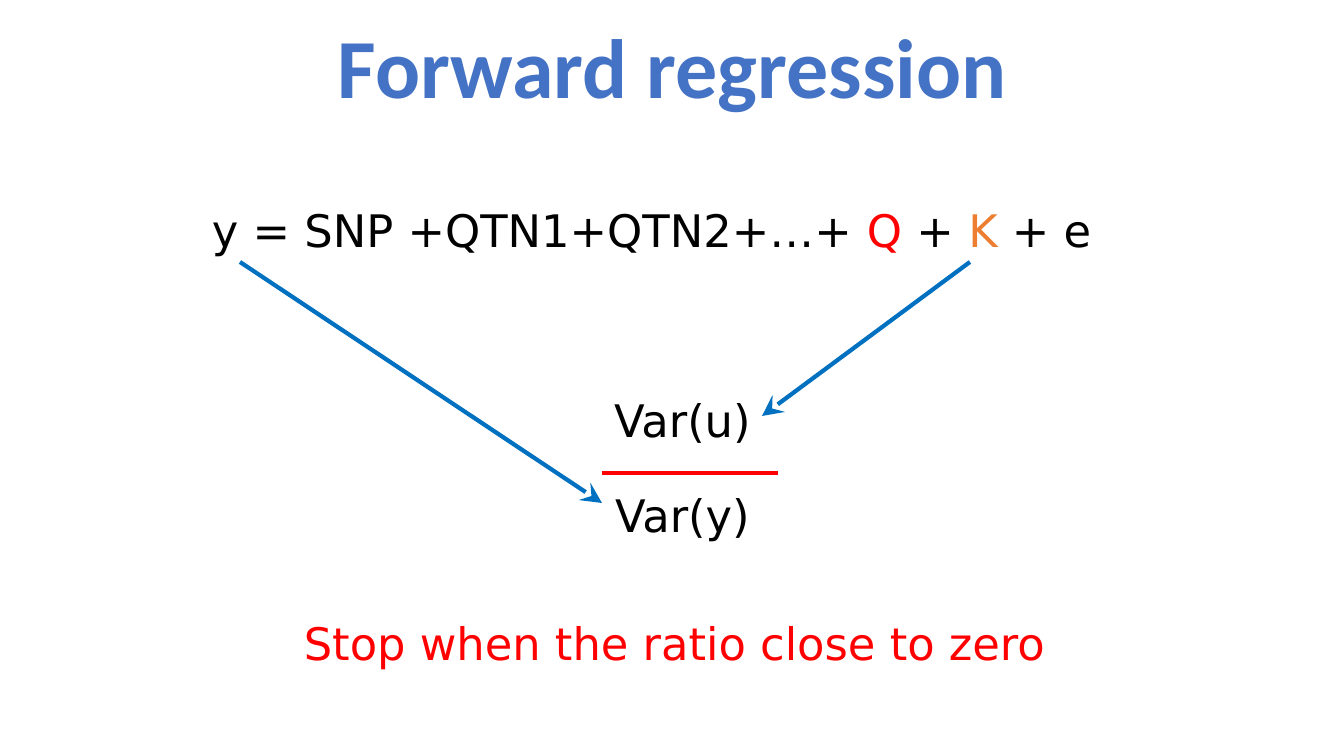
from lxml.etree import SubElement
from pptx import Presentation
from pptx.dml.color import RGBColor
from pptx.enum.shapes import MSO_CONNECTOR
from pptx.enum.text import MSO_ANCHOR, MSO_AUTO_SIZE, PP_ALIGN
from pptx.oxml.ns import qn
from pptx.util import Pt

EMU_PER_PIXEL = 914400 / 100.8
TITLE_BLUE = RGBColor(0x44, 0x72, 0xC4)
ARROW_BLUE = RGBColor(0x00, 0x70, 0xC0)
RED = RGBColor(0xFF, 0x00, 0x00)
ORANGE = RGBColor(0xED, 0x7D, 0x31)
BLACK = RGBColor(0x00, 0x00, 0x00)


def emu(*pixels):
    return [round(pixel * EMU_PER_PIXEL) for pixel in pixels]


class SlideBuilder:
    title_font = "Calibri"
    body_font = "DejaVu Sans"
    body_size = 32
    body_height = 64
    line_width = 3

    def __init__(self, slide):
        self.slide = slide

    def add_run(self, paragraph, text, font, size, color, bold=False):
        run = paragraph.add_run()
        run.text = text
        run.font.name = font
        run.font.size = Pt(size)
        run.font.bold = bold
        run.font.color.rgb = color

    def title(self, text, left, top, width, height):
        shape = self.slide.shapes.title
        shape.left, shape.top, shape.width, shape.height = emu(left, top, width, height)
        shape.text_frame.vertical_anchor = MSO_ANCHOR.MIDDLE
        paragraph = shape.text_frame.paragraphs[0]
        paragraph.alignment = PP_ALIGN.CENTER
        paragraph.line_spacing = 0.9
        self.add_run(paragraph, text, self.title_font, 60, TITLE_BLUE, bold=True)

    def text(self, runs, left, top, width, alignment=PP_ALIGN.CENTER):
        shape = self.slide.shapes.add_textbox(*emu(left, top, width, self.body_height))
        shape.text_frame.word_wrap = True
        shape.text_frame.auto_size = MSO_AUTO_SIZE.SHAPE_TO_FIT_TEXT
        paragraph = shape.text_frame.paragraphs[0]
        paragraph.alignment = alignment
        for text, color in runs:
            self.add_run(paragraph, text, self.body_font, self.body_size, color)

    def line(self, start, end, color, arrow=False):
        connector = self.slide.shapes.add_connector(
            MSO_CONNECTOR.STRAIGHT, *emu(*start, *end))
        connector.line.color.rgb = color
        connector.line.width = Pt(self.line_width)
        properties = connector._element.spPr
        if arrow:
            SubElement(properties.find(qn("a:ln")), qn("a:tailEnd"),
                       type="stealth", w="lg", len="lg")
        SubElement(properties, qn("a:effectLst"))


presentation = Presentation()
presentation.slide_width, presentation.slide_height = emu(1344, 756)
title_only = presentation.slide_layouts[5]
builder = SlideBuilder(presentation.slides.add_slide(title_only))

builder.title("Forward regression", 219, 8, 907, 126)
model_terms = [
    ("y = SNP +QTN1+QTN2+…+ ", BLACK),
    ("Q ", RED),
    ("+ ", BLACK),
    ("K ", ORANGE),
    ("+ e", BLACK),
]
builder.text(model_terms, 202, 198, 961, PP_ALIGN.LEFT)
for variance, top in (("Var(y)", 483), ("Var(u)", 388)):
    builder.text([(variance, BLACK)], 485, top, 395)
builder.line((602, 473), (778, 473), RED)
builder.text([("Stop when the ratio close to zero", RED)], 274, 611, 802)
for start, end in (((240, 262), (602, 503)), ((970, 262), (762, 416))):
    builder.line(start, end, ARROW_BLUE, arrow=True)

presentation.save("out.pptx")
